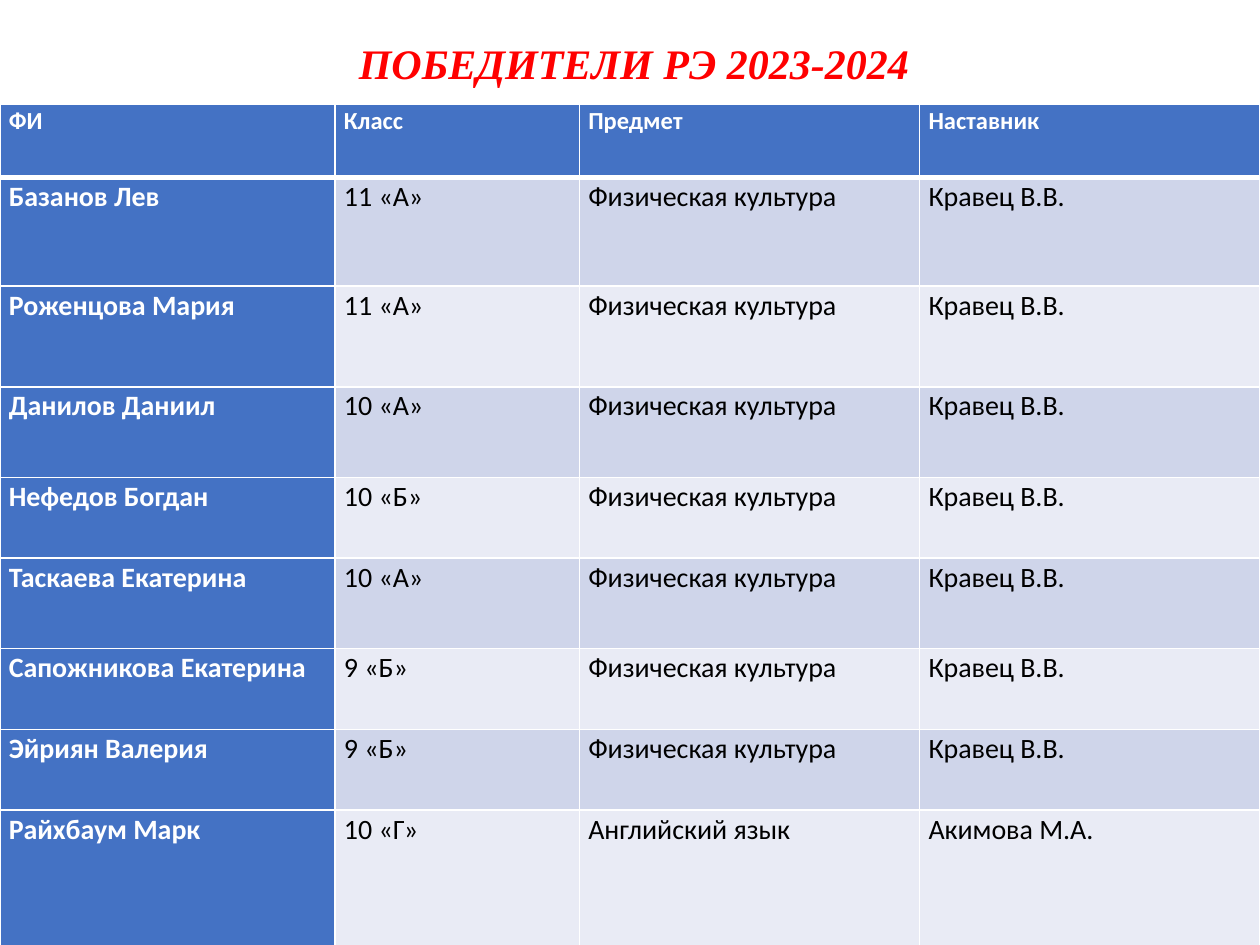
from lxml.etree import SubElement
from pptx import Presentation
from pptx.dml.color import RGBColor
from pptx.oxml.ns import qn
from pptx.util import Inches, Pt

WHITE = RGBColor(0xFF, 0xFF, 0xFF)
BLACK = RGBColor(0x00, 0x00, 0x00)
RED = RGBColor(0xFF, 0x00, 0x00)
BLUE = RGBColor(0x44, 0x72, 0xC4)
BAND_DARK = RGBColor(0xCF, 0xD5, 0xEA)
BAND_LIGHT = RGBColor(0xE9, 0xEB, 0xF5)

SPORT = "Физическая культура"
COACH = "Кравец В.В."
WINNERS = [
    ("ФИ", "Класс", "Предмет", "Наставник"),
    ("Базанов Лев", "11 «А»", SPORT, COACH),
    ("Роженцова Мария", "11 «А»", SPORT, COACH),
    ("Данилов Даниил", "10 «А»", SPORT, COACH),
    ("Нефедов Богдан", "10 «Б»", SPORT, COACH),
    ("Таскаева Екатерина", "10 «А»", SPORT, COACH),
    ("Сапожникова Екатерина", "9 «Б»", SPORT, COACH),
    ("Эйриян Валерия", "9 «Б»", SPORT, COACH),
    ("Райхбаум Марк", "10 «Г»", "Английский язык", "Акимова М.А."),
]
COLUMN_WIDTHS = [2.66, 1.94, 2.7, 2.7]
ROW_HEIGHTS = [0.58, 0.86, 0.8, 0.72, 0.64, 0.72, 0.64, 0.64, 1.18]


def add_run(para, text, font_name, size, color, bold):
    span = para.add_run()
    span.text = text
    span.font.name = font_name
    span.font.size = Pt(size)
    span.font.color.rgb = color
    span.font.bold = bold
    return span


def add_border(cell, side, width):
    line = SubElement(cell._tc.get_or_add_tcPr(), qn(f"a:ln{side}"), w=str(Pt(width)))
    fill = SubElement(line, qn("a:solidFill"))
    SubElement(fill, qn("a:srgbClr"), val=str(WHITE))


deck = Presentation()
deck.slide_width = Inches(10)
deck.slide_height = Inches(7.5)
page = deck.slides.add_slide(deck.slide_layouts[6])

frame = page.shapes.add_table(
    len(WINNERS), len(COLUMN_WIDTHS), Inches(0), Inches(0.83), Inches(10), Inches(6.75)
)
table = frame.table
for column, width in zip(table.columns, COLUMN_WIDTHS):
    column.width = Inches(width)
for row, height in zip(table.rows, ROW_HEIGHTS):
    row.height = Inches(height)

for row_index, winner in enumerate(WINNERS):
    for column_index, text in enumerate(winner):
        cell = table.cell(row_index, column_index)
        heading = row_index == 0 or column_index == 0
        cell.margin_left = cell.margin_right = Inches(0.07)
        cell.margin_top = cell.margin_bottom = Inches(0)
        add_border(cell, "L", 1)
        add_border(cell, "R", 1)
        add_border(cell, "T", 3 if row_index == 1 else 1)
        add_border(cell, "B", 3 if row_index == 0 else 1)
        cell.fill.solid()
        band = BAND_DARK if row_index % 2 else BAND_LIGHT
        cell.fill.fore_color.rgb = BLUE if heading else band
        para = cell.text_frame.paragraphs[0]
        para.line_spacing = 1.07
        para.space_after = Pt(8)
        size = 14 if row_index == 0 else 16
        add_run(para, text, "Calibri", size, WHITE if heading else BLACK, heading)

box = page.shapes.add_textbox(Inches(2.75), Inches(0.25), Inches(5), Inches(0.5))
box.text_frame.word_wrap = True
title = add_run(
    box.text_frame.paragraphs[0], "ПОБЕДИТЕЛИ РЭ 2023-2024", "Times New Roman", 24, RED, True
)
title.font.italic = True

deck.save("out.pptx")
